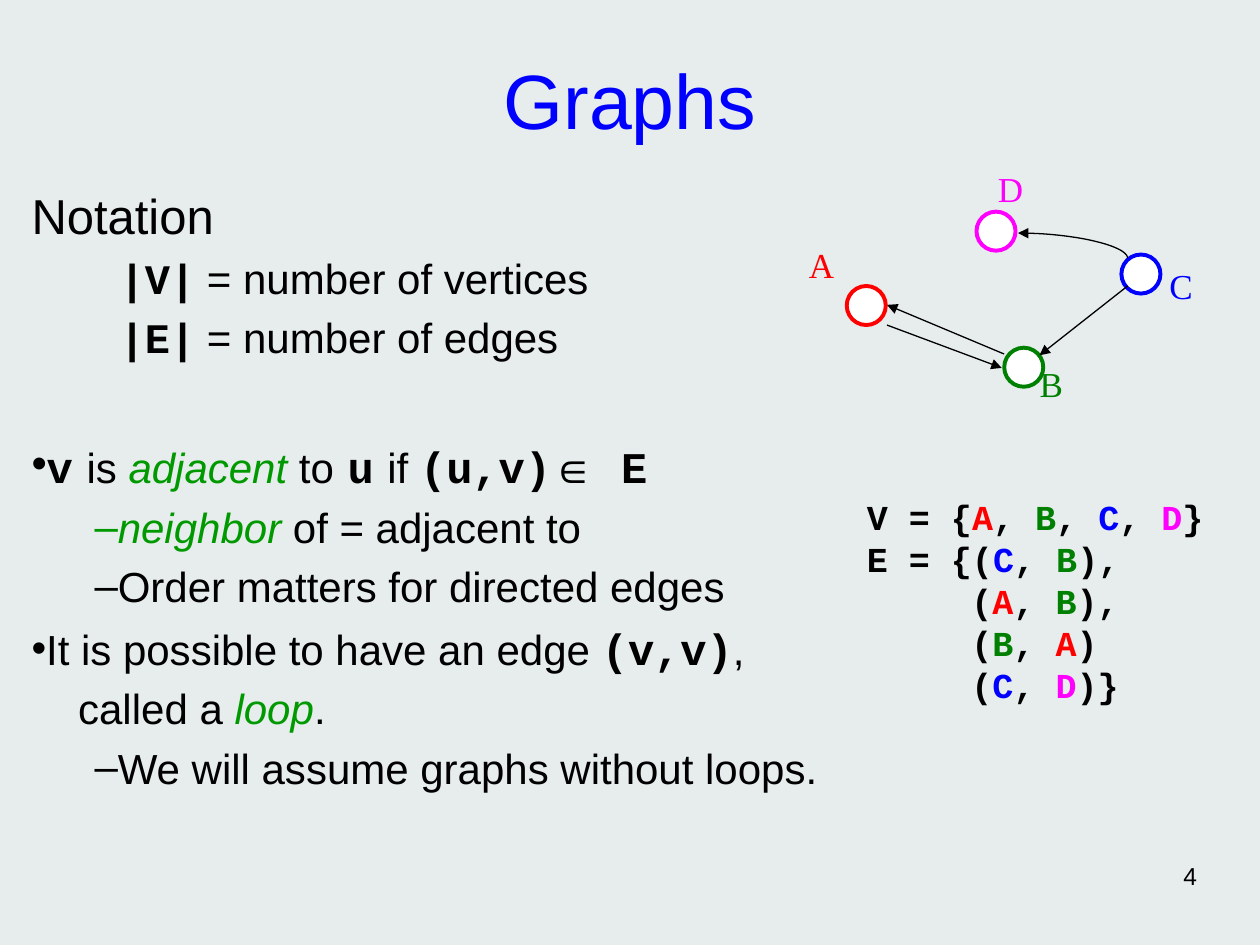
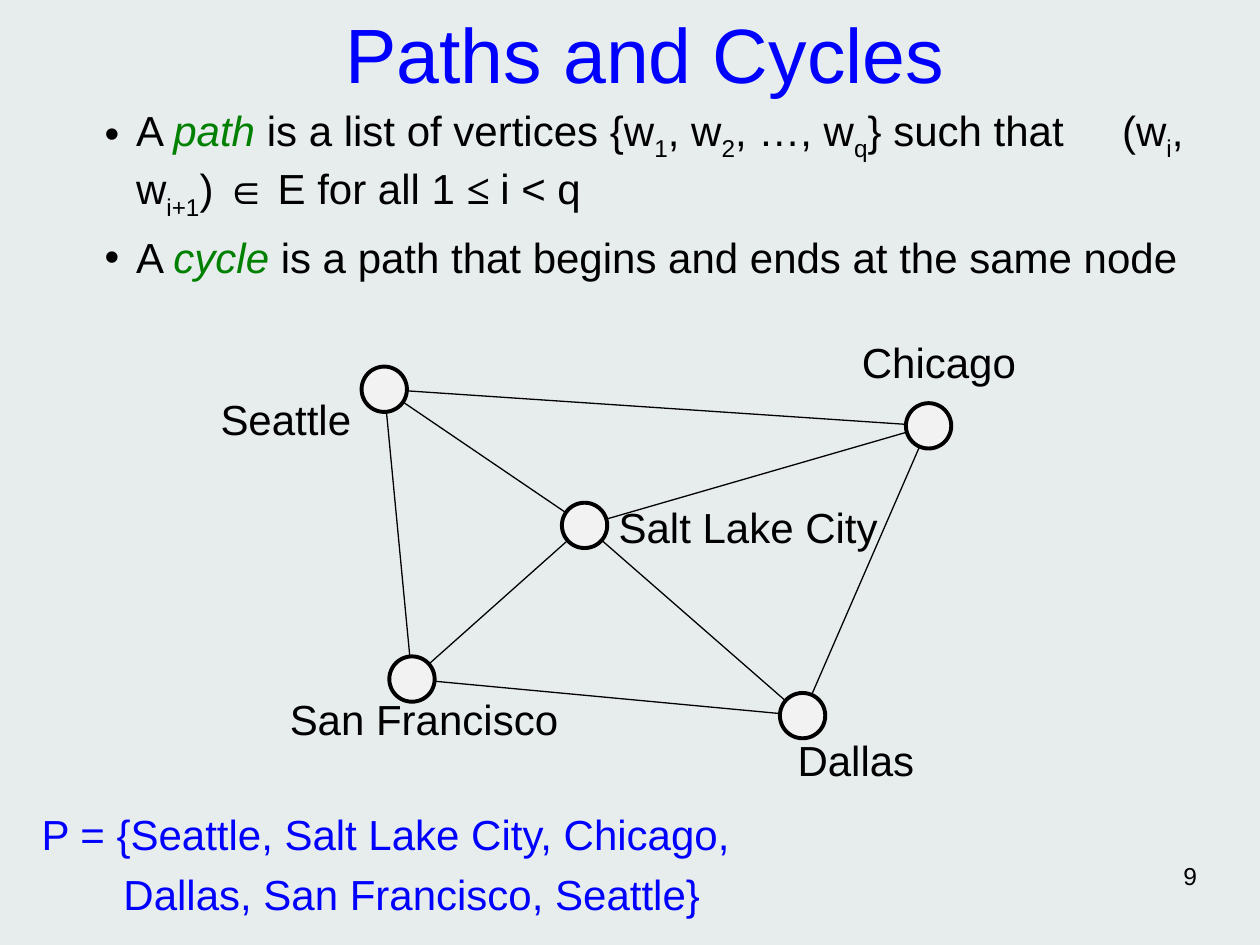
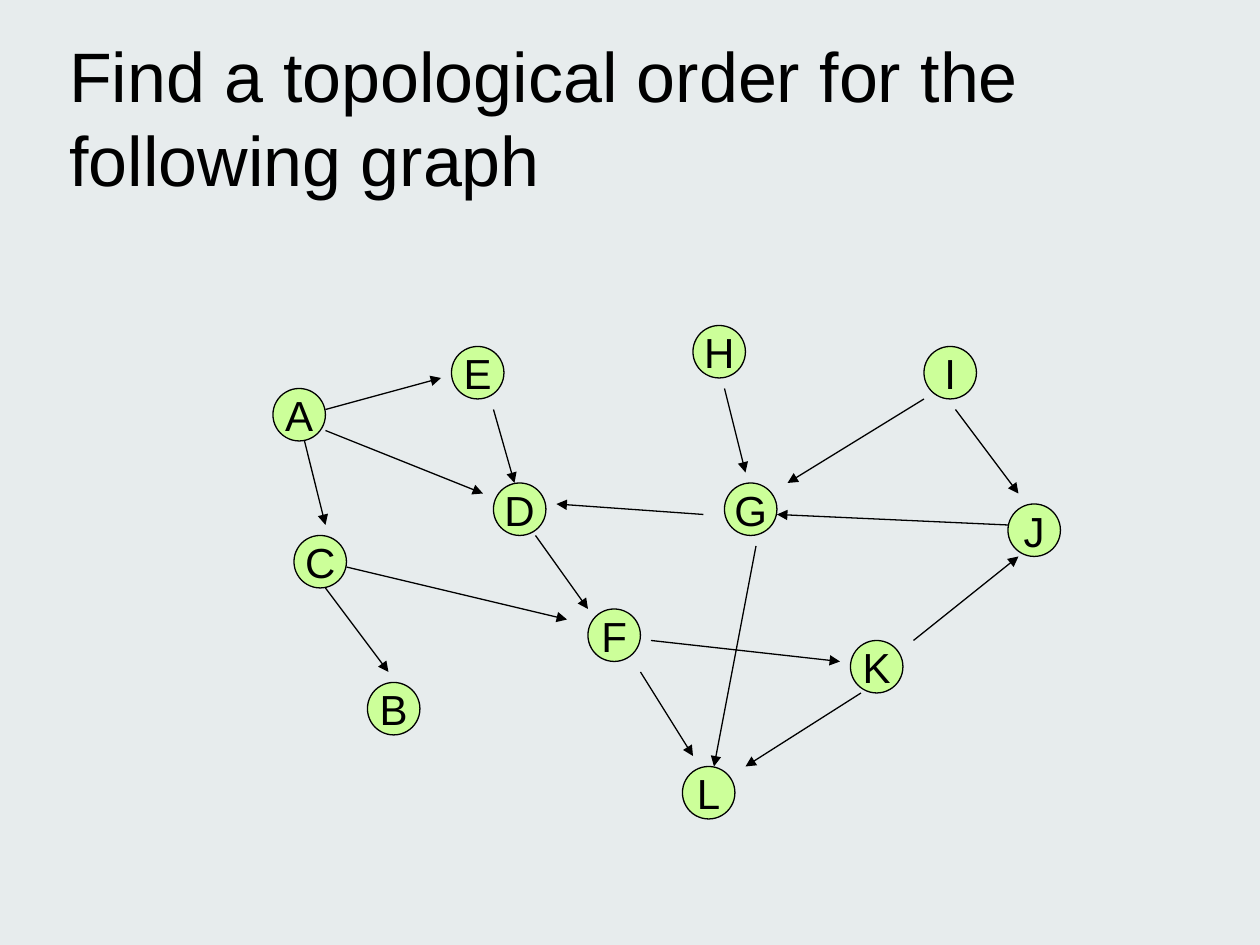
from dataclasses import dataclass
from itertools import groupby

from pptx import Presentation
from pptx.dml.color import RGBColor
from pptx.enum.shapes import MSO_CONNECTOR, MSO_SHAPE
from pptx.enum.text import MSO_ANCHOR, MSO_AUTO_SIZE, PP_ALIGN
from pptx.oxml.ns import qn
from pptx.oxml.xmlchemy import OxmlElement
from pptx.util import Inches, Pt

LEFT, CENTER, RIGHT = PP_ALIGN.LEFT, PP_ALIGN.CENTER, PP_ALIGN.RIGHT
TOP, MIDDLE = MSO_ANCHOR.TOP, MSO_ANCHOR.MIDDLE
NO_FIT = MSO_AUTO_SIZE.NONE
STRAIGHT = MSO_CONNECTOR.STRAIGHT
OVAL = MSO_SHAPE.OVAL
TITLE_CONTENT, TITLE_ONLY = 1, 5


@dataclass(frozen=True)
class Theme:
    background: str = "E7ECED"
    black: str = "000000"
    white: str = "FFFFFF"
    red: str = "FF0000"
    green: str = "008000"
    blue: str = "0000FF"
    magenta: str = "FF00FF"
    term: str = "009900"
    city: str = "F2F2F2"
    task: str = "CCFF99"
    sans: str = "Arial"
    mono: str = "Courier New"
    serif: str = "Times New Roman"
    title: int = 44
    long_title: int = 40
    heading: int = 28
    symbol: int = 25
    body: int = 24
    small: int = 20
    number: int = 14
    thin: float = 0.75
    thick: float = 2.25


T = Theme()
VERTEX_COLORS = {"A": T.red, "B": T.green, "C": T.blue, "D": T.magenta}

MONO = dict(font=T.mono, bold=True)
CODE = dict(MONO, size=T.symbol)
WIDE = dict(size=T.heading)
TERM = dict(color=T.term, italic=True)
DEFINED = dict(color=T.green, italic=True)
SUB = dict(sub=True)
SERIF = dict(font=T.serif)


def rgb(value):
    return RGBColor.from_string(value)


def add_run(p, text, size=T.body, color=T.black, font=T.sans, bold=False,
            italic=False, sub=False, spacing=0):
    r = p.add_run()
    r.text = text
    r.font.size = Pt(size)
    r.font.name = font
    r.font.color.rgb = rgb(color)
    r.font.bold = bold
    r.font.italic = italic
    rPr = r._r.get_or_add_rPr()
    if sub:
        rPr.set("baseline", "-27000")
    if spacing:
        rPr.set("spc", str(int(spacing * 100)))


def add_paragraph(tf, runs, align=LEFT, before=0, margin=0, hanging=0,
                  bullet=None, bullet_color=T.black, level=0):
    p = tf.paragraphs[0]
    if p.runs:
        p = tf.add_paragraph()
    p.level = level
    p.alignment = align
    p.space_before = Pt(before)
    pPr = p._p.get_or_add_pPr()
    pPr.set("marL", str(Inches(margin)))
    pPr.set("indent", str(-Inches(hanging)))
    if bullet:
        buClr = OxmlElement("a:buClr")
        clr = OxmlElement("a:srgbClr")
        clr.set("val", bullet_color)
        buClr.append(clr)
        buChar = OxmlElement("a:buChar")
        buChar.set("char", bullet)
        pPr.extend([buClr, buChar])
    else:
        pPr.append(OxmlElement("a:buNone"))
    for text, style in runs:
        add_run(p, text, **style)


def format_frame(sp, inset=0, anchor=TOP):
    tf = sp.text_frame
    tf.word_wrap = True
    tf.auto_size = NO_FIT
    tf.vertical_anchor = anchor
    tf.margin_left = tf.margin_right = Inches(inset)
    tf.margin_top = tf.margin_bottom = Inches(inset)
    return tf


def place(sp, box):
    sp.left, sp.top, sp.width, sp.height = map(Inches, box)


def set_title(s, text, box, size=T.title, color=T.blue, align=CENTER, inset=0):
    sp = s.shapes.title
    place(sp, box)
    tf = format_frame(sp, inset, MIDDLE)
    add_paragraph(tf, [(text, dict(size=size, color=color))], align)


def set_body(s, box, paragraphs):
    sp = s.placeholders[1]
    place(sp, box)
    tf = format_frame(sp)
    for runs, layout in paragraphs:
        add_paragraph(tf, runs, **layout)


def add_text(s, box):
    return format_frame(s.shapes.add_textbox(*map(Inches, box)))


def add_label(s, text, box, **style):
    add_paragraph(add_text(s, box), [(text, style)])


def add_page_number(s, number):
    tf = add_text(s, (7.17, 6.83, 2.33, 0.31))
    add_paragraph(tf, [(number, dict(size=T.number))], RIGHT)


def add_node(s, x, y, size, fill, line=T.black, width=T.thick):
    sp = s.shapes.add_shape(OVAL, *map(Inches, (x, y, size, size)))
    sp.shadow.inherit = False
    sp.fill.solid()
    sp.fill.fore_color.rgb = rgb(fill)
    sp.line.color.rgb = rgb(line)
    sp.line.width = Pt(width)
    return sp


def format_line(sp, arrow):
    sp.line.color.rgb = rgb(T.black)
    sp.line.width = Pt(T.thin)
    if arrow:
        tail = OxmlElement("a:tailEnd")
        tail.set("type", "triangle")
        sp._element.spPr.find(qn("a:ln")).append(tail)


def add_edge(s, start, end, arrow=True):
    edge = s.shapes.add_connector(STRAIGHT, *map(Inches, (*start, *end)))
    format_line(edge, arrow)
    edge._element.spPr.append(OxmlElement("a:effectLst"))


def add_curved_edge(s, controls, steps=24):
    points = []
    for i in range(steps + 1):
        t = i / steps
        weights = ((1 - t) ** 3, 3 * t * (1 - t) ** 2, 3 * t * t * (1 - t), t ** 3)
        points.append(tuple(
            Inches(sum(w * c[axis] for w, c in zip(weights, controls)))
            for axis in (0, 1)))
    builder = s.shapes.build_freeform(*points[0])
    builder.add_line_segments(points[1:], close=False)
    sp = builder.convert_to_shape()
    sp.fill.background()
    format_line(sp, True)
    sp.shadow.inherit = False


def new_slide(prs, layout):
    return prs.slides.add_slide(prs.slide_layouts[layout])


def add_set_listing(s):
    tf = add_text(s, (6.88, 3.93, 2.95, 1.7))
    lines = (("V = {A, B, C, D}", 0), ("E = {(C, B),", 0), ("(A, B),", 0.83),
             ("(B, A)", 0.83), ("(C, D)}", 0.83))
    for line, margin in lines:
        groups = groupby(line, lambda ch: VERTEX_COLORS.get(ch, T.black))
        runs = [("".join(chars), dict(MONO, size=T.small, color=color))
                for color, chars in groups]
        add_paragraph(tf, runs, margin=margin)


def build_graphs(prs):
    s = new_slide(prs, TITLE_CONTENT)
    set_title(s, "Graphs", (0.5, 0.16, 9, 1.25))
    top = dict(margin=0.11, hanging=0.11)
    point = dict(top, before=6, bullet="•")
    sub = dict(margin=0.63, hanging=0.13, before=5, level=1)
    dash = dict(sub, bullet="–")
    set_body(s, (0.25, 1.47, 9.5, 5.78), [
        ([("Notation", WIDE)], top),
        ([(" |V|", MONO), (" = number of vertices", {})], sub),
        ([(" |E|", MONO), (" = number of edges", {})], sub),
        ([("v", CODE), (" ", WIDE), ("is ", {}), ("adjacent", TERM), (" to", {}),
          (" ", WIDE), ("u", CODE), (" ", WIDE), ("if ", {}), ("(u,v)", CODE),
          ("∈", dict(CODE, font=T.serif)), (" E", CODE)], dict(point, before=41)),
        ([("neighbor", TERM), (" of = adjacent to", {})],
         dict(dash, bullet_color=T.term)),
        ([("Order matters for directed edges", {})], dash),
        ([("It is possible to have an edge ", {}), ("(v,v)", CODE), (",", {})], point),
        ([("called a ", {}), ("loop", TERM), (".", {})], dict(margin=0.37, before=5)),
        ([("We will assume graphs without loops.", {})], dash),
    ])
    add_page_number(s, "4")
    add_set_listing(s)
    vertices = {
        "A": ((6.72, 2.27), (6.42, 1.93)),
        "B": ((7.97, 2.76), (8.25, 2.88)),
        "C": ((8.9, 2.02), (9.28, 2.1)),
        "D": ((7.75, 1.68), (7.92, 1.33)),
    }
    for name, (node, label) in vertices.items():
        color = VERTEX_COLORS[name]
        add_node(s, *node, 0.31, T.white, color)
        add_label(s, name, (*label, 0.31, 0.41), size=T.small, font=T.serif,
                  color=color)
    for start, end in (((8.95, 2.27), (8.25, 2.82)), ((7.97, 2.81), (7.04, 2.42)),
                       ((7.04, 2.58), (7.95, 2.92))):
        add_edge(s, start, end)
    add_curved_edge(s, ((8.95, 2.05), (8.95, 1.95), (8.52, 1.85), (8.08, 1.85)))


def build_paths(prs):
    s = new_slide(prs, TITLE_CONTENT)
    set_title(s, "Paths and Cycles", (2.08, 0, 6.08, 0.83))
    point = dict(margin=0.25, hanging=0.25, before=6, bullet="•")
    set_body(s, (0.83, 0.83, 8.67, 1.92), [
        ([("A ", {}), ("path", DEFINED), (" is a list of vertices {w", {}), ("1", SUB),
          (", w", {}), ("2", SUB), (", …, w", {}), ("q", SUB), ("} such that", {}),
          (" ", dict(spacing=26.7)), ("(w", {}), ("i", SUB), (", w", {}),
          ("i+1", SUB), (") ", {}), ("∈ ", SERIF), ("E for all 1 ", {}),
          ("≤ ", dict(SERIF, bold=True)), ("i < q", {})], point),
        ([("A ", {}), ("cycle", DEFINED),
          (" is a path that begins and ends at the same node", {})], point),
    ])
    add_page_number(s, "9")
    cities = {
        "Seattle": ((3.05, 3.09), (1.75, 3.12, 1.15)),
        "San Francisco": ((3.27, 5.39), (2.3, 5.5, 2.24)),
        "Chicago": ((7.37, 3.38), (6.84, 2.67, 1.34)),
        "Salt Lake City": ((4.64, 4.17), (4.91, 3.98, 2.17)),
        "Dallas": ((6.37, 5.68), (6.33, 5.83, 1.04)),
    }
    routes = (
        ("San Francisco", "Seattle"), ("Chicago", "Dallas"), ("Chicago", "Seattle"),
        ("Seattle", "Salt Lake City"), ("San Francisco", "Salt Lake City"),
        ("Salt Lake City", "Dallas"), ("Salt Lake City", "Chicago"),
        ("Dallas", "San Francisco"),
    )
    for start, end in routes:
        add_edge(s, cities[start][0], cities[end][0], arrow=False)
    for name, ((x, y), label) in cities.items():
        add_label(s, name, (*label, 0.48))
        add_node(s, x - 0.18, y - 0.18, 0.36, T.city)
    tf = add_text(s, (0.33, 6.42, 9.67, 0.95))
    for line, margin in (("P = {Seattle, Salt Lake City, Chicago,", 0),
                         ("Dallas, San Francisco, Seattle}", 0.65)):
        add_paragraph(tf, [(line, dict(color=T.blue))], before=5, margin=margin)


def build_topological_order(prs):
    s = new_slide(prs, TITLE_ONLY)
    set_title(s, "Find a topological order for the following graph",
              (0.5, 0.1, 9, 1.65), T.long_title, T.black, LEFT, 0.05)
    per_inch = 12
    nodes = {
        "E": (43, 33), "F": (56, 58), "D": (47, 46), "A": (26, 37),
        "C": (28, 51), "B": (35, 65), "K": (81, 61), "J": (96, 48),
        "G": (69, 46), "H": (66, 31), "I": (88, 33), "L": (65, 73),
    }
    edges = (
        (31, 39, 42, 36), (31, 41, 46, 47), (29, 42, 31, 50), (51, 51, 56, 58),
        (62, 61, 80, 63), (87, 61, 97, 53), (67, 49, 53, 48), (96, 50, 74, 49),
        (69, 37, 71, 45), (47, 39, 49, 46), (31, 56, 37, 64), (33, 54, 54, 59),
        (61, 64, 66, 72), (72, 52, 68, 73), (82, 66, 71, 73), (88, 38, 75, 46),
        (91, 39, 97, 47),
    )
    for name, (x, y) in nodes.items():
        sp = add_node(s, x / per_inch, y / per_inch, 5 / per_inch, T.task,
                      width=T.thin)
        tf = format_frame(sp, anchor=MIDDLE)
        tf.word_wrap = False
        add_paragraph(tf, [(name, {})], CENTER)
    for edge in edges:
        x1, y1, x2, y2 = (value / per_inch for value in edge)
        add_edge(s, (x1, y1), (x2, y2))


def main():
    prs = Presentation()
    prs.slide_width, prs.slide_height = Inches(10), Inches(7.5)
    fill = prs.slide_master.background.fill
    fill.solid()
    fill.fore_color.rgb = rgb(T.background)
    build_graphs(prs)
    build_paths(prs)
    build_topological_order(prs)
    prs.save("out.pptx")


if __name__ == "__main__":
    main()
